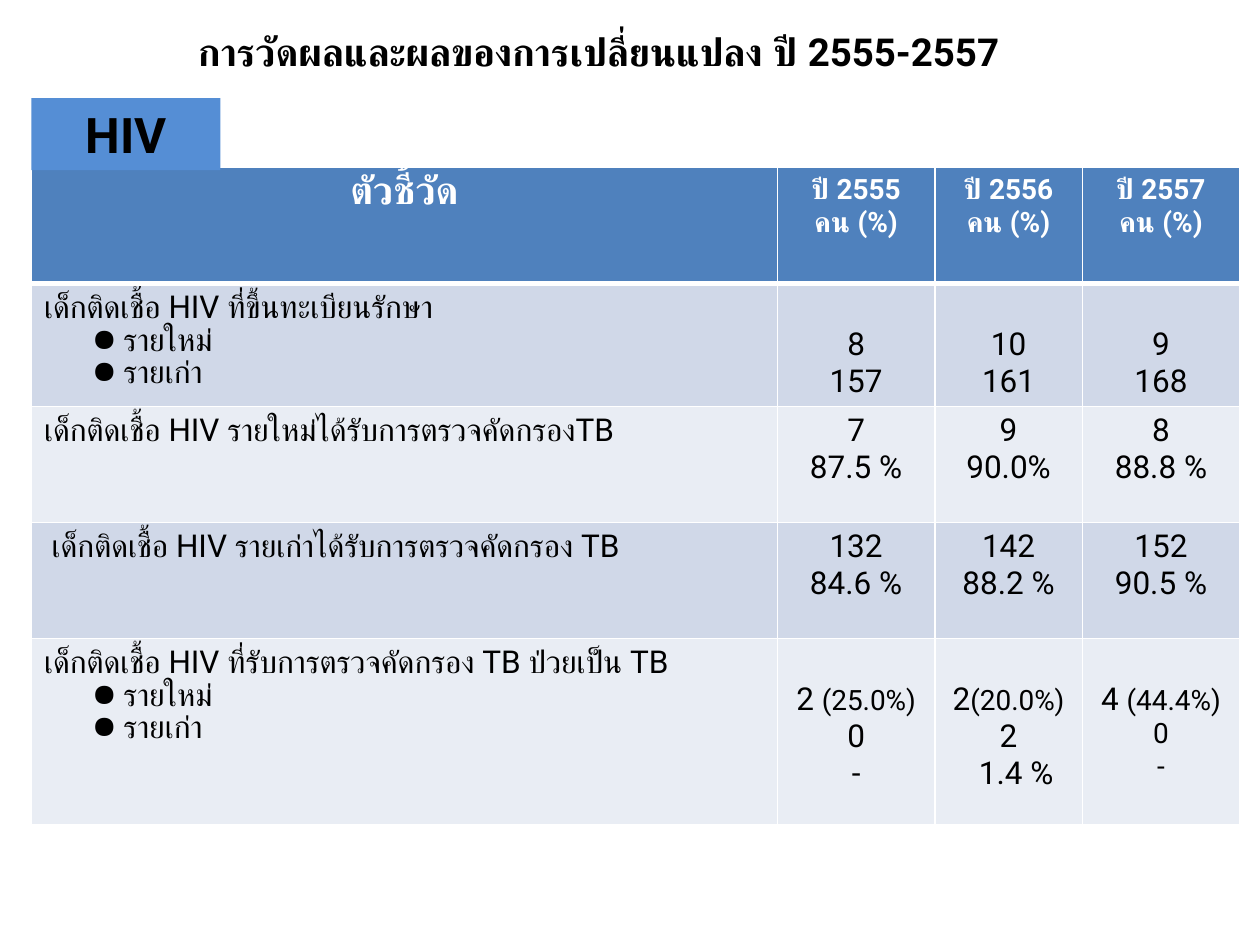
"""Build the slide of HIV screening results for the years 2555-2557."""
from lxml import etree
from pptx import Presentation, util as u
from pptx.dml.color import RGBColor
from pptx.enum import shapes, text
from pptx.oxml.ns import qn

BLACK, WHITE = RGBColor(0, 0, 0), RGBColor(255, 255, 255)
HEADER, LABEL = RGBColor(0x4F, 0x81, 0xBD), RGBColor(0x55, 0x8E, 0xD5)
BANDS = RGBColor(0xD0, 0xD8, 0xE8), RGBColor(0xE9, 0xED, 0xF4)
FONT = "Roboto"
LEFT, TABLE_TOP = 0.25, 1.33
COLS = 5.92, 1.25, 1.17, 1.25
ROWS = 0.92, 0.97, 0.92, 0.92, 1.48
LINE = 0.29

TITLE = "การวัดผลและผลของการเปลี่ยนแปลง ปี 2555-2557"
HEADS = [["ตัวชี้วัด"]] + [[f"ปี {year}", "คน (%)"] for year in (2555, 2556, 2557)]
CASES = ["รายใหม่", "รายเก่า"]
BODY = [
    {"name": "เด็กติดเชื้อ HIV ที่ขึ้นทะเบียนรักษา", "cases": CASES,
     "values": [["8", "157"], ["10", "161"], ["9", "168"]]},
    {"name": "เด็กติดเชื้อ HIV รายใหม่ได้รับการตรวจคัดกรองTB",
     "values": [["7", "87.5 %"], ["9", "90.0%"], ["8", "88.8 %"]]},
    {"name": "เด็กติดเชื้อ HIV รายเก่าได้รับการตรวจคัดกรอง TB", "indent": 0.06,
     "values": [["132", "84.6 %"], ["142", "88.2 %"], ["152", "90.5 %"]]},
    {"name": "เด็กติดเชื้อ HIV ที่รับการตรวจคัดกรอง TB ป่วยเป็น TB", "cases": CASES,
     "values": [[["2 ", ("(25.0%)", 16)], "0", "-"],
                [["2", ("(20.0%)", 16)], "2", "1.4 %"],
                [["4 ", ("(44.4%)", 16)], [("0", 16)], [("-", 16)]]]},
]


def write(tf, lines, size=18, bold=False, color=BLACK, align=text.PP_ALIGN.CENTER):
    """Fill a text frame; a line is a string or a list of runs."""
    tf.word_wrap = True
    for i, line in enumerate(lines):
        p = tf.paragraphs[0] if i == 0 else tf.add_paragraph()
        p.alignment = align
        for part in [line] if isinstance(line, str) else line:
            words, points = (part, size) if isinstance(part, str) else part
            r = p.add_run()
            r.text = words
            r.font.name, r.font.size, r.font.bold = FONT, u.Pt(points), bold
            r.font.color.rgb = color


def indent(p, left, bullet=None):
    """Indent a paragraph, with a hanging bullet if one is given."""
    pr = p._p.get_or_add_pPr()
    pr.set("marL", str(u.Inches(left)))
    if bullet:
        pr.set("indent", str(u.Inches(-0.25)))
        etree.SubElement(pr, qn("a:buChar")).set("char", bullet)


def paint(cell, color, bottom=1):
    """Give a cell white borders and a solid fill."""
    pr = cell._tc.get_or_add_tcPr()
    for side, width in (("L", 1), ("R", 1), ("T", 1), ("B", bottom)):
        ln = etree.SubElement(pr, qn(f"a:ln{side}"), w=str(u.Pt(width)))
        fill = etree.SubElement(ln, qn("a:solidFill"))
        etree.SubElement(fill, qn("a:srgbClr"), val=str(WHITE))
    cell.fill.solid()
    cell.fill.fore_color.rgb = color


def add_results(s):
    """Add the table of indicators by year."""
    box = map(u.Inches, (LEFT, TABLE_TOP, sum(COLS), sum(ROWS)))
    table = s.shapes.add_table(len(ROWS), len(COLS), *box).table
    for col, width in zip(table.columns, COLS):
        col.width = u.Inches(width)
    for row, height in zip(table.rows, ROWS):
        row.height = u.Inches(height)
    for c, lines in enumerate(HEADS):
        cell = table.cell(0, c)
        write(cell.text_frame, lines, size=16 if c else 22, bold=True, color=WHITE)
        paint(cell, HEADER, bottom=3)
    for r, item in enumerate(BODY, 1):
        cases = item.get("cases", [])
        name = table.cell(r, 0)
        write(name.text_frame, [item["name"], *cases], align=text.PP_ALIGN.LEFT)
        indent(name.text_frame.paragraphs[0], item.get("indent", 0))
        for p in name.text_frame.paragraphs[1:]:
            indent(p, 0.63, "●")
        for c, lines in enumerate(item["values"], 1):
            cell = table.cell(r, c)
            write(cell.text_frame, lines)
            if cases:
                cell.margin_top = u.Inches(0.05 + LINE)
        for cell in table.rows[r].cells:
            paint(cell, BANDS[(r - 1) % 2])
    indent(table.cell(4, 2).text_frame.paragraphs[-1], 0.12)


def main():
    prs = Presentation()
    prs.slide_width, prs.slide_height = u.Inches(10), u.Inches(7.5)
    s = prs.slides.add_slide(prs.slide_layouts[6])
    add_results(s)
    title = s.shapes.add_textbox(*map(u.Inches, (LEFT, 0.17, 9, 0.67)))
    write(title.text_frame, [TITLE], size=22, bold=True)
    sp = s.shapes.add_shape(shapes.MSO_SHAPE.RECTANGLE,
                            *map(u.Inches, (LEFT, 0.78, 1.5, 0.57)))
    sp.shadow.inherit = False
    sp.fill.solid()
    sp.fill.fore_color.rgb = LABEL
    sp.line.fill.background()
    write(sp.text_frame, ["HIV"], size=28, bold=True)
    prs.save("out.pptx")


if __name__ == "__main__":
    main()
